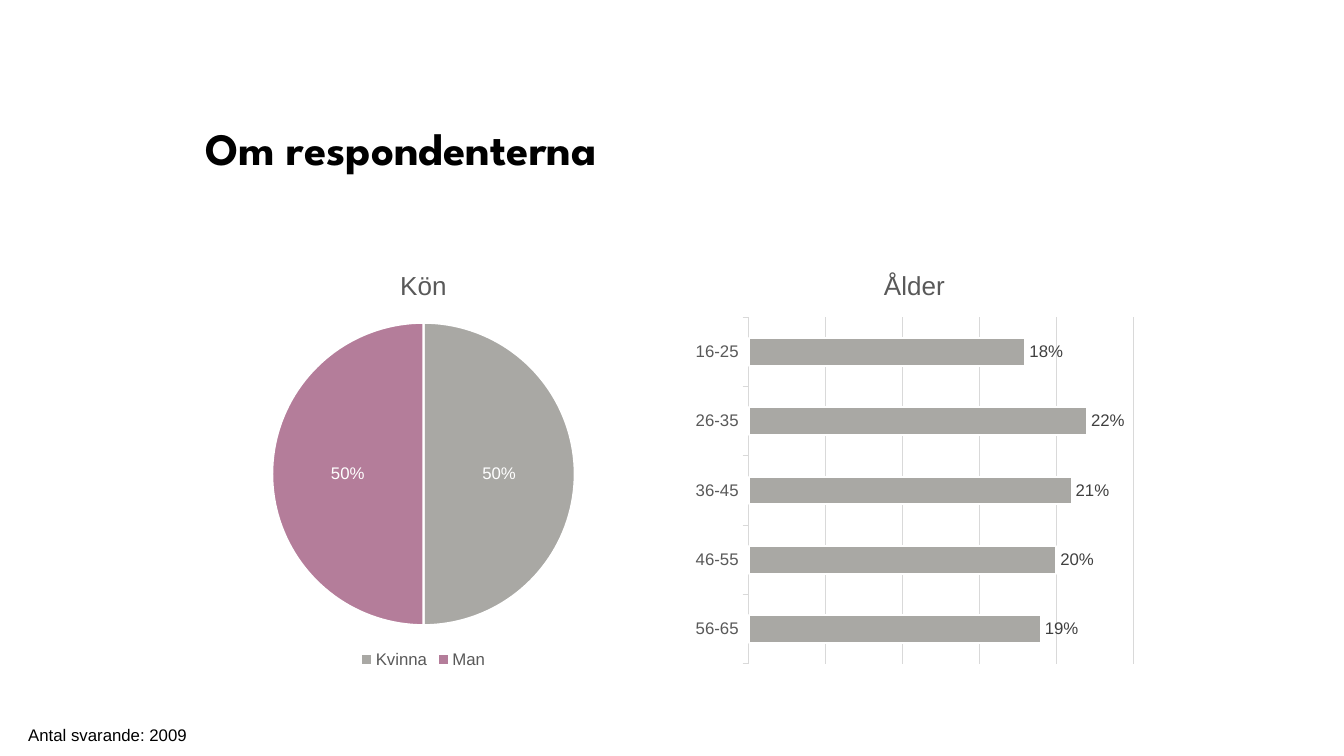
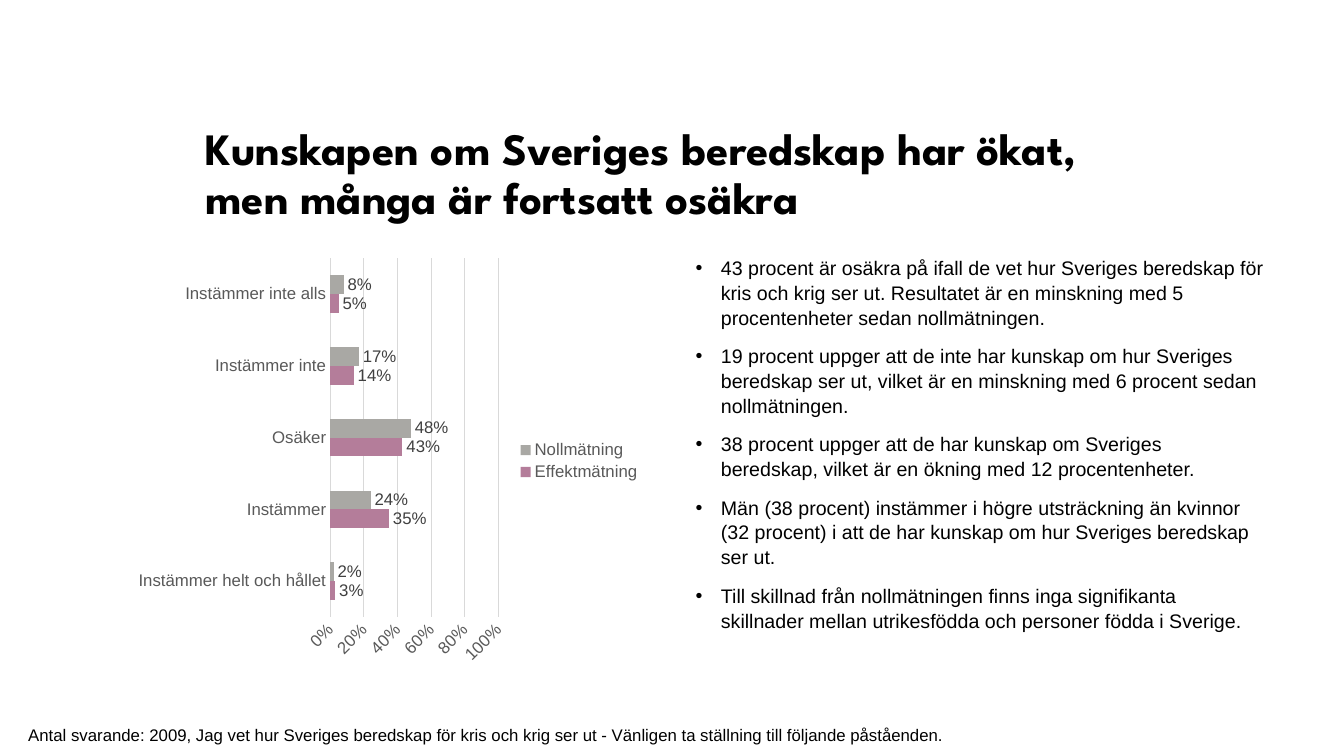
from pptx import Presentation
from pptx import util as u
from pptx.chart.data import CategoryChartData
from pptx.dml.color import RGBColor
from pptx.enum import chart as ch, text
from pptx.oxml import parse_xml
from pptx.oxml.ns import nsdecls
from dataclasses import dataclass


@dataclass(frozen=True)
class Theme:
    black: str = "000000"
    white: str = "FFFFFF"
    grey: str = "A9A8A4"
    pink: str = "B47D9A"
    muted: str = "595959"
    label: str = "404040"
    rule: str = "D9D9D9"
    heading: str = "League Spartan"
    font: str = "Arial"
    title: float = 32
    body: float = 14
    small: float = 12
    chart_title: float = 18.6


T = Theme()
TITLE_BOX = (1.94, 1.21, 9.38, 1.06)
FOOT_BOX = (0.28, 7.19, 10.84, 0.2)
TOP, HEIGHT = 2.48, 4.19
LEFT_BOX = (1.94, TOP, 4.52, HEIGHT)
RIGHT_BOX = (6.81, TOP, 4.52, HEIGHT)
WIDE_BOX = (1.27, TOP, 5.19, HEIGHT)
BODY_BOX = (6.8, TOP, 5.84, HEIGHT)

RESPONDENTS = {
    "title": "Om respondenterna",
    "foot": "Antal svarande: 2009",
    "gender": {"cats": ["Kvinna", "Man"], "series": [("Kön", [0.5, 0.5])]},
    "age": {
        "cats": ["56-65", "46-55", "36-45", "26-35", "16-25"],
        "series": [("Ålder", [0.19, 0.2, 0.21, 0.22, 0.18])],
    },
}
KNOWLEDGE = {
    "title": "Kunskapen om Sveriges beredskap har ökat, men många är fortsatt osäkra",
    "foot": "Antal svarande: 2009, Jag vet hur Sveriges beredskap för kris och krig ser ut - "
            "Vänligen ta ställning till följande påståenden.",
    "bullets": [
        "43 procent är osäkra på ifall de vet hur Sveriges beredskap för kris och krig ser ut. "
        "Resultatet är en minskning med 5 procentenheter sedan nollmätningen.",
        "19 procent uppger att de inte har kunskap om hur Sveriges beredskap ser ut, "
        "vilket är en minskning med 6 procent sedan nollmätningen.",
        "38 procent uppger att de har kunskap om Sveriges beredskap, "
        "vilket är en ökning med 12 procentenheter.",
        "Män (38 procent) instämmer i högre utsträckning än kvinnor (32 procent) "
        "i att de har kunskap om hur Sveriges beredskap ser ut.",
        "Till skillnad från nollmätningen finns inga signifikanta skillnader "
        "mellan utrikesfödda och personer födda i Sverige.",
    ],
    "answers": {
        "cats": ["Instämmer helt och hållet", "Instämmer", "Osäker",
                 "Instämmer inte", "Instämmer inte alls"],
        "series": [("Effektmätning", [0.03, 0.35, 0.43, 0.14, 0.05]),
                   ("Nollmätning", [0.02, 0.24, 0.48, 0.17, 0.08])],
    },
}


def inches(box):
    return [u.Inches(v) for v in box]


def place(sp, box):
    sp.left, sp.top, sp.width, sp.height = inches(box)


def style(font, size=T.small, color=T.muted, name=T.font, bold=False):
    font.size, font.name, font.bold = u.Pt(size), name, bold
    font.color.rgb = RGBColor.from_string(color)


def paint(fmt, color):
    fmt.solid()
    fmt.fore_color.rgb = RGBColor.from_string(color)


def stroke(line, color, width):
    line.color.rgb = RGBColor.from_string(color)
    line.width = u.Pt(width)


def write(tf, *lines, bullet=False, gap=0, spacing=1.0, **fmt):
    tf.word_wrap = True
    tf.vertical_anchor = text.MSO_ANCHOR.TOP
    tf.auto_size = text.MSO_AUTO_SIZE.NONE
    for i, line in enumerate(lines):
        p = tf.add_paragraph() if i else tf.paragraphs[0]
        p.alignment = text.PP_ALIGN.LEFT
        p.line_spacing = spacing
        p.space_before = u.Pt(gap if i else 0)
        if bullet:
            pPr = p._p.get_or_add_pPr()
            pPr.set("marL", str(u.Inches(0.25)))
            pPr.set("indent", str(-u.Inches(0.25)))
            pPr.append(parse_xml(f'<a:buFont {nsdecls("a")} typeface="Arial"/>'))
            pPr.append(parse_xml(f'<a:buChar {nsdecls("a")} char="•"/>'))
        r = p.add_run()
        r.text = line
        style(r.font, **fmt)


def add_slide(prs, layout, content):
    s = prs.slides.add_slide(prs.slide_layouts[layout])
    place(s.shapes.title, TITLE_BOX)
    write(s.shapes.title.text_frame, content["title"], spacing=0.9,
          size=T.title, color=T.black, name=T.heading, bold=True)
    tf = s.shapes.add_textbox(*inches(FOOT_BOX)).text_frame
    tf.margin_left = tf.margin_top = tf.margin_right = tf.margin_bottom = 0
    write(tf, content["foot"], color=T.black)
    return s


def add_chart(s, kind, box, content, title=None, legend=None):
    data = CategoryChartData(number_format="0%")
    data.categories = content["cats"]
    for name, values in content["series"]:
        data.add_series(name, values)
    chart = s.shapes.add_chart(kind, *inches(box), data).chart
    style(chart.font, 10, T.black)
    chart.has_title = bool(title)
    if title:
        p = chart.chart_title.text_frame.paragraphs[0]
        r = p.add_run()
        r.text = title
        style(r.font, T.chart_title)
        chart.chart_title.include_in_layout = False
    chart.has_legend = legend is not None
    if chart.has_legend:
        chart.legend.position = legend
        chart.legend.include_in_layout = False
        style(chart.legend.font)
    return chart


def label_values(plot, color, position):
    plot.has_data_labels = True
    labels = plot.data_labels
    labels.show_value = True
    labels.number_format, labels.number_format_is_linked = "0%", False
    labels.position = position
    style(labels.font, color=color)


def add_pie(s, box, content, colors, **kw):
    chart = add_chart(s, ch.XL_CHART_TYPE.PIE, box, content, **kw)
    plot = chart.plots[0]
    plot.vary_by_categories = True
    for i, color in enumerate(colors):
        point = plot.series[0].points[i]
        paint(point.format.fill, color)
        stroke(point.format.line, T.white, 1.5)
    label_values(plot, T.white, ch.XL_LABEL_POSITION.CENTER)


def add_bars(s, box, content, colors, gap, top, step, tick, outline=False, show_axis=True, **kw):
    chart = add_chart(s, ch.XL_CHART_TYPE.BAR_CLUSTERED, box, content, **kw)
    plot = chart.plots[0]
    plot.vary_by_categories = False
    plot.gap_width, plot.overlap = gap, 0
    for series, color in zip(plot.series, colors):
        paint(series.format.fill, color)
        if outline:
            stroke(series.format.line, T.white, 1.5)
    label_values(plot, T.label, ch.XL_LABEL_POSITION.OUTSIDE_END)

    cat, val = chart.category_axis, chart.value_axis
    for axis, mark in ((cat, tick), (val, ch.XL_TICK_MARK.NONE)):
        axis.major_tick_mark, axis.minor_tick_mark = mark, ch.XL_TICK_MARK.NONE
        style(axis.tick_labels.font)
    cat.has_major_gridlines = False
    stroke(cat.format.line, T.rule, 0.75)
    val.minimum_scale, val.maximum_scale, val.major_unit = 0, top, step
    val.has_major_gridlines = True
    stroke(val.major_gridlines.format.line, T.rule, 0.75)
    val.tick_labels.number_format = "0%"
    val.tick_labels.number_format_is_linked = False
    val.format.line.fill.background()
    val.visible = show_axis
    if show_axis:
        val._element.txPr.bodyPr.set("rot", str(-45 * 60000))


def main():
    prs = Presentation()
    prs.slide_width, prs.slide_height = u.Inches(13.33), u.Inches(7.5)

    s = add_slide(prs, 5, RESPONDENTS)
    add_pie(s, LEFT_BOX, RESPONDENTS["gender"], [T.grey, T.pink],
            title="Kön", legend=ch.XL_LEGEND_POSITION.BOTTOM)
    add_bars(s, RIGHT_BOX, RESPONDENTS["age"], [T.grey], gap=150, top=0.25, step=0.05,
             tick=ch.XL_TICK_MARK.OUTSIDE, outline=True, show_axis=False, title="Ålder")

    s = add_slide(prs, 1, KNOWLEDGE)
    body = s.placeholders[1]
    place(body, BODY_BOX)
    write(body.text_frame, *KNOWLEDGE["bullets"], bullet=True, gap=10, spacing=1.05,
          size=T.body, color=T.black)
    add_bars(s, WIDE_BOX, KNOWLEDGE["answers"], [T.pink, T.grey], gap=182, top=1, step=0.2,
             tick=ch.XL_TICK_MARK.NONE, legend=ch.XL_LEGEND_POSITION.RIGHT)

    prs.save("out.pptx")


if __name__ == "__main__":
    main()
